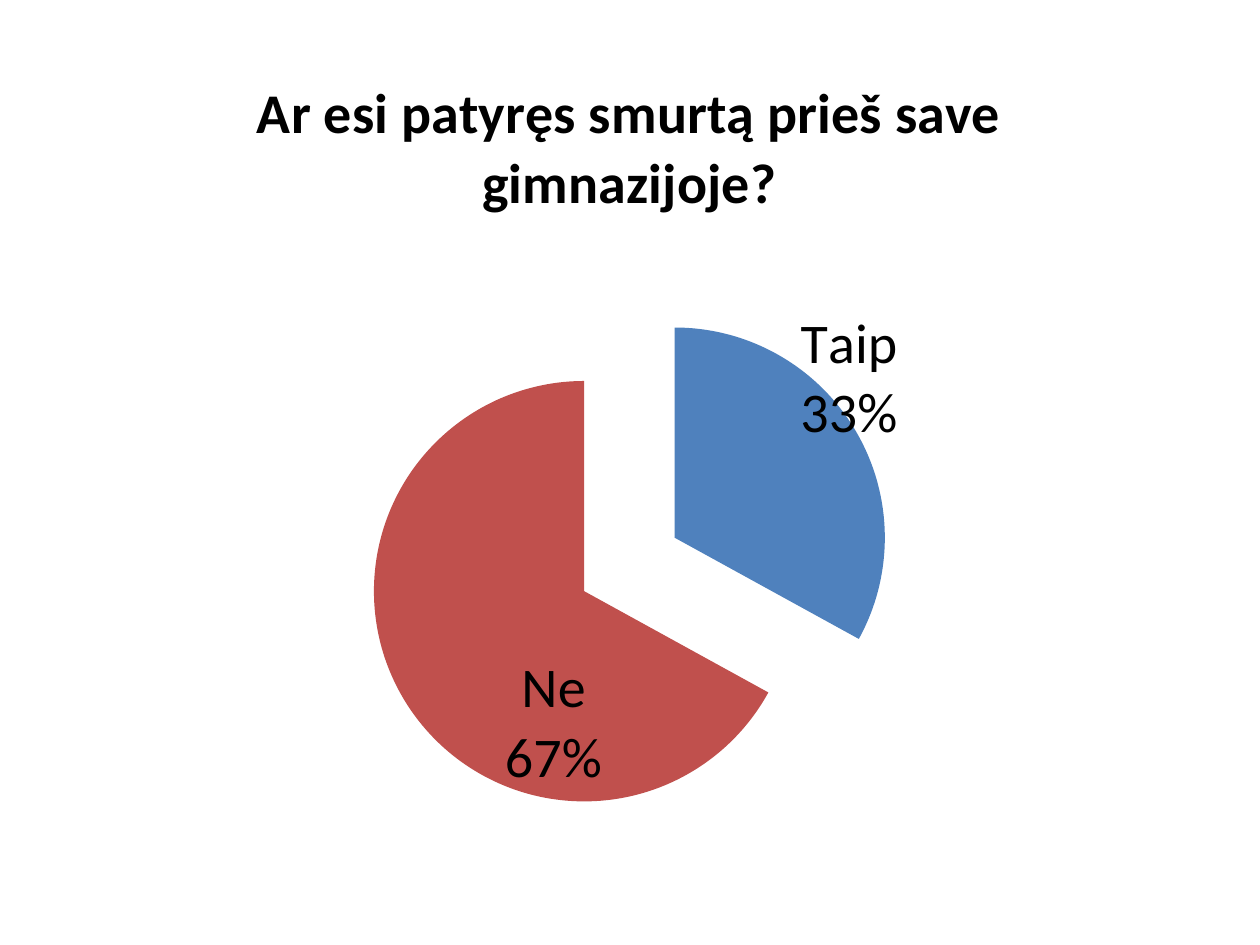
from pptx import Presentation, util as u
from pptx.chart.data import CategoryChartData
from pptx.dml.color import RGBColor
from pptx.enum import chart as ch
from pptx.oxml import parse_xml
from pptx.oxml.ns import nsdecls, qn

SCALE = 914400 // 126
FONT = "Calibri"
SIZE = 32


def px(n):
    return u.Emu(n * SCALE)


def paint(fill, tone):
    fill.solid()
    fill.fore_color.rgb = RGBColor.from_string(tone)


def style(font, size, bold=False):
    font.name = FONT
    font.size = u.Pt(size)
    font.bold = bold
    font.color.rgb = RGBColor.from_string("000000")


def layout(x, y, w=None, h=None):
    """Manual chart layout, in fractions of the chart."""
    edge = '<c:xMode val="edge"/><c:yMode val="edge"/>'
    body = f'<c:x val="{x}"/><c:y val="{y}"/>'
    if w:
        body = (f'<c:layoutTarget val="inner"/>{edge}{body}'
                f'<c:w val="{w}"/><c:h val="{h}"/>')
    return parse_xml(f'<c:layout {nsdecls("c")}><c:manualLayout>{body}'
                     '</c:manualLayout></c:layout>')


def label(point, shift):
    """Show category over percent, moved from the slice's middle."""
    tag = point.data_label
    style(tag.font, SIZE)
    tag.position = ch.XL_LABEL_POSITION.CENTER
    node = tag.font._element.getparent().getparent()
    while node.tag != qn("c:dLbl"):
        node = node.getparent()
    for name, on in (("Val", 0), ("CatName", 1), ("Percent", 1)):
        node.find(qn("c:show" + name)).set("val", str(on))
    node.find(qn("c:idx")).addnext(layout(*shift))
    node.append(parse_xml(f'<c:separator {nsdecls("c")}>\n</c:separator>'))


def pie(slide, left, top, wide, high):
    data = CategoryChartData(number_format="0")
    data.categories = ["Taip", "Ne"]
    data.add_series("Series 1", [33, 67])
    chart = slide.shapes.add_chart(
        ch.XL_CHART_TYPE.PIE, px(left), px(top), px(wide), px(high), data).chart
    style(chart.font, 10)
    chart.has_legend = False

    # Title
    chart.has_title = True
    head = chart.chart_title
    head.include_in_layout = False
    para = head.text_frame.paragraphs[0]
    para.text = "Ar esi patyręs smurtą prieš save gimnazijoje?"
    style(para.runs[0].font, SIZE, True)

    # Plot area
    area = chart._chartSpace.chart.plotArea
    for old in area.findall(qn("c:layout")):
        area.remove(old)
    area.insert(0, layout(0.28, 0.3, 0.44, 0.6))

    # Slices and their labels
    plot = chart.plots[0]
    plot.vary_by_categories = True
    row = plot.series[0]
    looks = [("4F81BD", (0.07, -0.12)), ("C0504D", (0.05, 0.09))]
    for i, (tone, shift) in enumerate(looks):
        point = row.points[i]
        paint(point.format.fill, tone)
        label(point, shift)
    burst = parse_xml(f'<c:explosion {nsdecls("c")} val="25"/>')
    row._element.find(qn("c:dPt")).addprevious(burst)
    for node in row._element.findall(qn("c:dPt")):
        node.find(qn("c:spPr")).addprevious(
            parse_xml(f'<c:explosion {nsdecls("c")} val="25"/>'))


def main():
    deck = Presentation()
    deck.slide_width, deck.slide_height = px(1260), px(945)
    slide = deck.slides.add_slide(deck.slide_layouts[6])
    paint(slide.background.fill, "FFFFFF")
    pie(slide, 29, 39, 1201, 876)
    deck.save("out.pptx")


if __name__ == "__main__":
    main()
